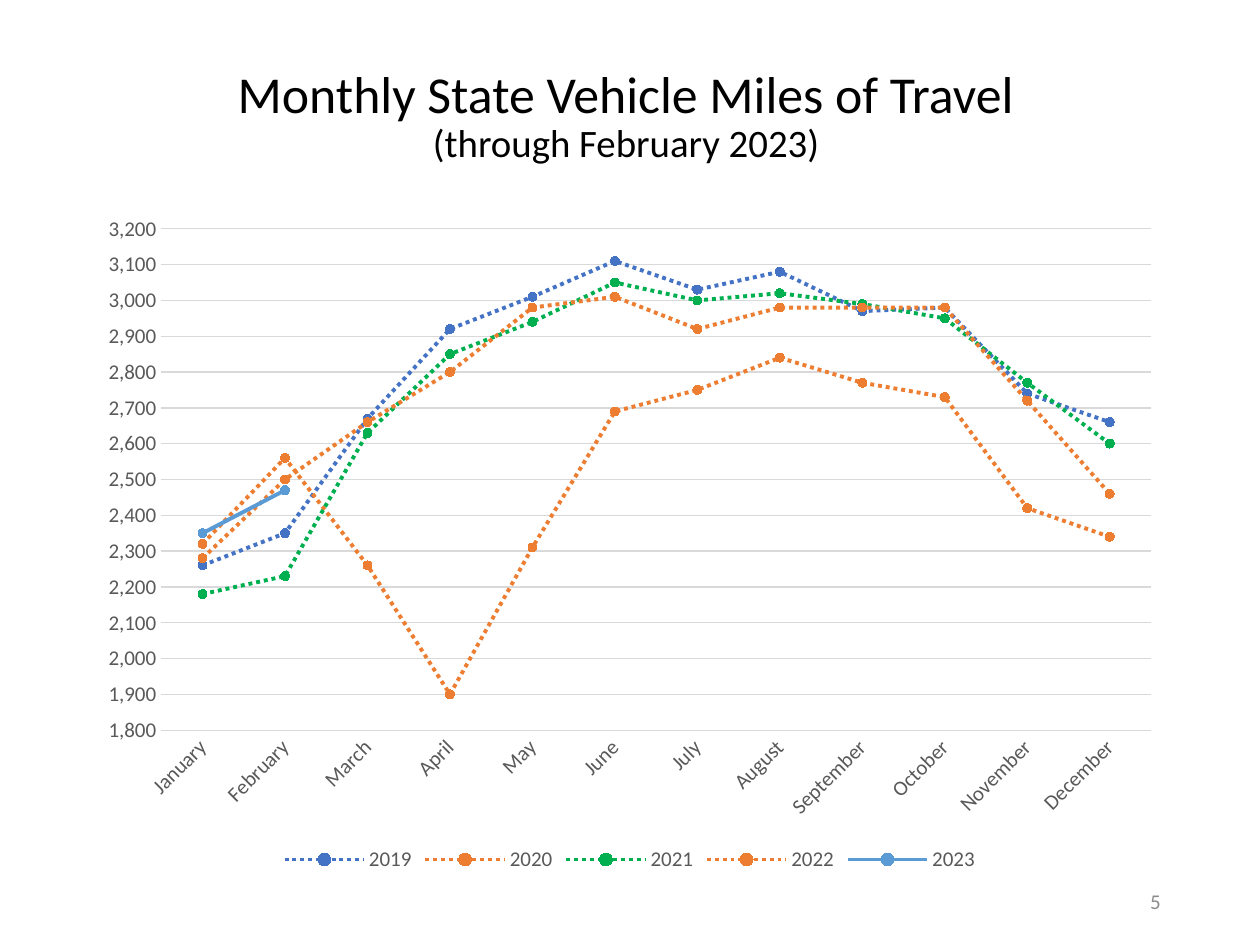
from pptx import Presentation
from pptx.chart.data import CategoryChartData
from pptx.dml.color import RGBColor
from pptx.enum.chart import XL_CHART_TYPE, XL_LEGEND_POSITION, XL_MARKER_STYLE, XL_TICK_MARK
from pptx.enum.dml import MSO_LINE
from pptx.enum.text import MSO_ANCHOR, MSO_AUTO_SIZE, PP_ALIGN
from pptx.oxml.ns import qn
from pptx.util import Cm, Pt

LINE_MARKERS = XL_CHART_TYPE.LINE_MARKERS
BOTTOM = XL_LEGEND_POSITION.BOTTOM
CIRCLE = XL_MARKER_STYLE.CIRCLE
NO_TICK = XL_TICK_MARK.NONE
DOTTED = MSO_LINE.ROUND_DOT
CENTER, RIGHT = PP_ALIGN.CENTER, PP_ALIGN.RIGHT

FONT = "Calibri"
COLORS = {
    "text": "000000", "label": "595959", "number": "8C8C8C", "grid": "D9D9D9",
    "2019": "4472C4", "2020": "ED7D31", "2021": "00B050",
    "2022": "ED7D31", "2023": "5B9BD5",
}
MONTHS = ["January", "February", "March", "April", "May", "June", "July",
          "August", "September", "October", "November", "December"]
MILES = {
    "2019": [2260, 2350, 2670, 2920, 3010, 3110, 3030, 3080, 2970, 2980, 2740, 2660],
    "2020": [2320, 2560, 2260, 1900, 2310, 2690, 2750, 2840, 2770, 2730, 2420, 2340],
    "2021": [2180, 2230, 2630, 2850, 2940, 3050, 3000, 3020, 2990, 2950, 2770, 2600],
    "2022": [2280, 2500, 2660, 2800, 2980, 3010, 2920, 2980, 2980, 2980, 2720, 2460],
    "2023": [2350, 2470] + [None] * 10,
}


def rgb(name):
    return RGBColor.from_string(COLORS[name])


def write(p, text, size, color="text", align=CENTER, spacing=None):
    p.alignment = align
    p.line_spacing = spacing
    r = p.add_run()
    r.text = text
    r.font.name = FONT
    r.font.size = Pt(size)
    r.font.color.rgb = rgb(color)


prs = Presentation()
prs.slide_width, prs.slide_height = Cm(25.4), Cm(19.05)
s = prs.slides.add_slide(prs.slide_layouts[5])

# Title
title = s.shapes.title
title.left, title.top, title.width, title.height = Cm(1.68), Cm(1.12), Cm(21.89), Cm(2.36)
tf = title.text_frame
tf.auto_size = MSO_AUTO_SIZE.NONE
tf.vertical_anchor = MSO_ANCHOR.BOTTOM
write(tf.paragraphs[0], "Monthly State Vehicle Miles of Travel", 29.6, spacing=0.9)
write(tf.add_paragraph(), "(through February 2023)", 22.2, spacing=0.9)

# Chart
data = CategoryChartData(number_format="#,##0")
data.categories = MONTHS
for year, values in MILES.items():
    data.add_series(year, values)
chart = s.shapes.add_chart(LINE_MARKERS, Cm(1.75), Cm(4.09), Cm(21.89), Cm(13.59), data).chart
chart.has_title = False
chart.font.name = FONT
chart.font.size = Pt(10)

chart.has_legend = True
legend = chart.legend
legend.position = BOTTOM
legend.include_in_layout = False

months, miles = chart.category_axis, chart.value_axis
for font in (legend.font, months.tick_labels.font, miles.tick_labels.font):
    font.name = FONT
    font.size = Pt(12)
    font.color.rgb = rgb("label")
for axis in (months, miles):
    axis.major_tick_mark = axis.minor_tick_mark = NO_TICK

miles.minimum_scale, miles.maximum_scale, miles.major_unit = 1800, 3200, 100
miles.tick_labels.number_format = "#,##0"
miles.tick_labels.number_format_is_linked = False
miles.format.line.fill.background()
for line in (months.format.line, miles.major_gridlines.format.line):
    line.color.rgb = rgb("grid")
    line.width = Pt(0.75)
# Slant the month names by 45 degrees
months._element.find(qn("c:txPr")).find(qn("a:bodyPr")).set("rot", "-2700000")

for series in chart.plots[0].series:
    color = rgb(series.name)
    series.smooth = False
    line, marker = series.format.line, series.marker
    line.color.rgb = color
    line.width = Pt(2.25)
    if series.name != "2023":
        line.dash_style = DOTTED
    marker.style = CIRCLE
    marker.size = 5
    marker.format.fill.solid()
    marker.format.fill.fore_color.rgb = color
    marker.format.line.color.rgb = color

# Slide number
tf = s.shapes.add_textbox(Cm(17.93), Cm(17.65), Cm(5.72), Cm(1.02)).text_frame
tf.word_wrap = True
tf.vertical_anchor = MSO_ANCHOR.MIDDLE
write(tf.paragraphs[0], "5", 12, color="number", align=RIGHT)

prs.save("out.pptx")
